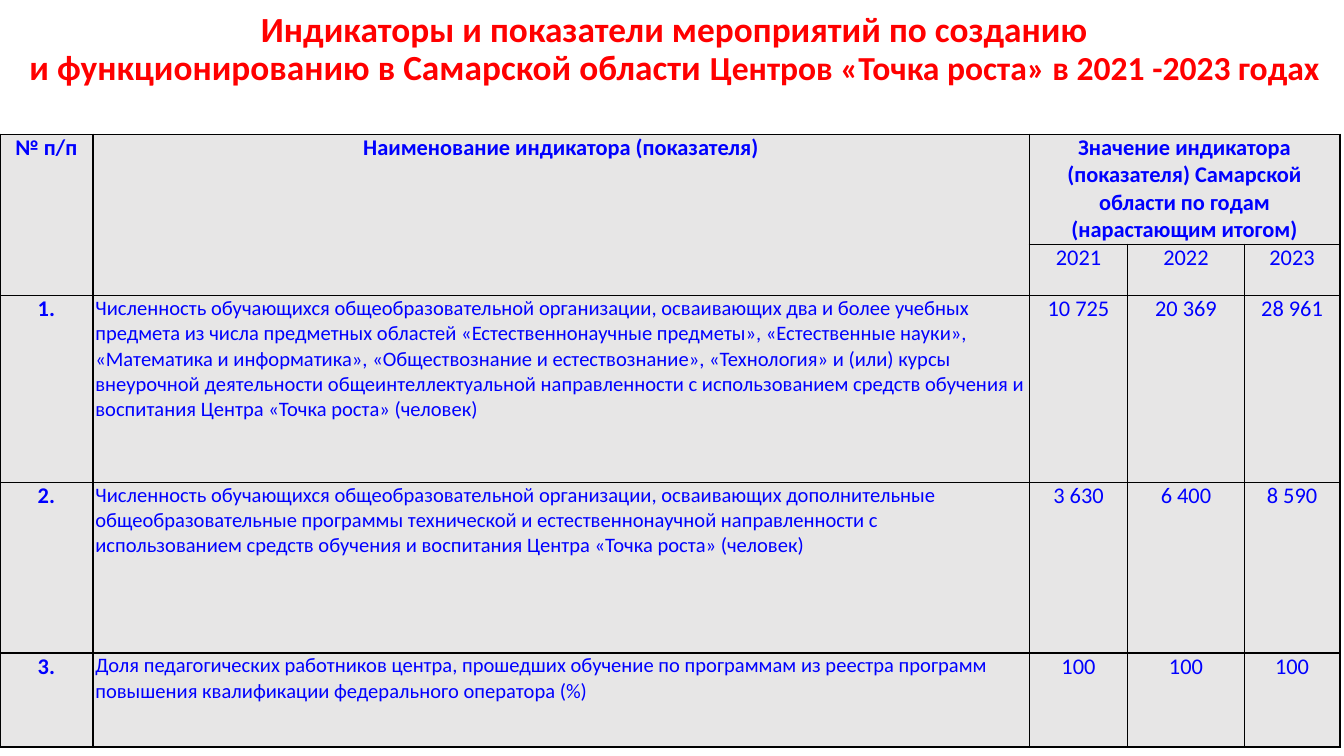
from lxml.etree import SubElement
from pptx import Presentation
from pptx.dml.color import RGBColor
from pptx.enum.text import MSO_ANCHOR, PP_ALIGN
from pptx.oxml.ns import qn
from pptx.util import Pt

TITLE = [
    ("Индикаторы и показатели мероприятий по созданию\v"
     "и функционированию в Самарской области ", 18.9),
    ("Центров «Точка роста» в 2021 -2023 годах", 18),
]
COLUMNS = [49.7, 501.8, 52.6, 62.6, 51.1]
HEIGHTS = [59, 27.4, 100.1, 91.4, 50.4]
MERGES = [(0, 0, 1, 0), (0, 1, 1, 1), (0, 2, 0, 4)]
ROWS = [
    ["№ п/п", "Наименование индикатора (показателя)",
     "Значение индикатора (показателя) Самарской области по годам "
     "(нарастающим итогом)", "", ""],
    ["", "", "2021", "2022", "2023"],
    ["1.",
     "Численность обучающихся общеобразовательной организации, осваивающих два "
     "и более учебных предмета из числа предметных областей «Естественнонаучные "
     "предметы», «Естественные науки», «Математика и информатика», "
     "«Обществознание и естествознание», «Технология» и (или) курсы внеурочной "
     "деятельности общеинтеллектуальной направленности с использованием средств "
     "обучения и воспитания Центра «Точка роста» (человек)",
     "10 725", "20 369", "28 961"],
    ["2.",
     "Численность обучающихся общеобразовательной организации, осваивающих "
     "дополнительные общеобразовательные программы технической и "
     "естественнонаучной направленности с использованием средств обучения и "
     "воспитания Центра «Точка роста» (человек)",
     "3 630", "6 400", "8 590"],
    ["3.",
     "Доля педагогических работников центра, прошедших обучение по программам "
     "из реестра программ повышения квалификации федерального оператора (%)",
     "100", "100", "100"],
]


def rgb(value):
    """Turn a hex string into a colour."""
    return RGBColor.from_string(value)


def apply(target, values):
    """Set every attribute listed in a dict of format values."""
    for name, value in values.items():
        setattr(target, name, value)


class Page:
    """Holds the style and the current slide."""

    font, red, blue, grey, black = "Calibri", "FF0000", "0000FF", "E7E6E6", "000000"

    def __init__(self, s):
        """Keep the slide to draw on."""
        self.s = s

    def run(self, p, text, size, color, bold):
        """Add one formatted run, where a vertical tab breaks the line."""
        for i, line in enumerate(text.split("\v")):
            if i:
                p.add_line_break()
            r = p.add_run()
            r.text = line
            apply(r.font, {"name": self.font, "size": Pt(size), "bold": bold})
            r.font.color.rgb = rgb(color)

    def title(self, runs, left, top, width, height):
        """Add the centred slide title."""
        sp = self.s.shapes.add_textbox(Pt(left), Pt(top), Pt(width), Pt(height))
        tf = sp.text_frame
        apply(tf, {"word_wrap": True, "vertical_anchor": MSO_ANCHOR.MIDDLE})
        p = tf.paragraphs[0]
        apply(p, {"alignment": PP_ALIGN.CENTER, "line_spacing": 0.9})
        for text, size in runs:
            self.run(p, text, size, self.red, True)

    def borders(self, cell):
        """Draw a thin line on all four sides of a cell."""
        tc_pr = cell._tc.get_or_add_tcPr()
        for side in ("lnL", "lnR", "lnT", "lnB"):
            ln = SubElement(tc_pr, qn(f"a:{side}"), w=str(Pt(1)))
            fill = SubElement(ln, qn("a:solidFill"))
            SubElement(fill, qn("a:srgbClr"), val=self.black)

    def cell(self, cell, text, size, bold, align):
        """Style one table cell and write its text."""
        apply(cell, {"margin_left": Pt(1.4), "margin_right": Pt(1.4),
                     "margin_top": 0, "margin_bottom": 0})
        self.borders(cell)
        cell.fill.solid()
        cell.fill.fore_color.rgb = rgb(self.grey)
        if text:
            p = cell.text_frame.paragraphs[0]
            p.alignment = align
            self.run(p, text, size, self.blue, bold)

    def table(self, rows, left, top):
        """Add the table of indicators."""
        table = self.s.shapes.add_table(
            len(rows), len(COLUMNS), Pt(left), Pt(top),
            Pt(sum(COLUMNS)), Pt(sum(HEIGHTS))).table
        apply(table, {"first_row": False, "horz_banding": False})
        for column, width in zip(table.columns, COLUMNS):
            column.width = Pt(width)
        for row, height in zip(table.rows, HEIGHTS):
            row.height = Pt(height)
        for top_row, first, bottom_row, last in MERGES:
            table.cell(top_row, first).merge(table.cell(bottom_row, last))
        for i, row in enumerate(rows):
            for j, text in enumerate(row):
                wording = i > 1 and j == 1
                self.cell(table.cell(i, j), text, 11 if wording else 12,
                          i == 0 or j == 0,
                          PP_ALIGN.LEFT if wording else PP_ALIGN.CENTER)


def main():
    """Build and save the slide."""
    prs = Presentation()
    apply(prs, {"slide_width": Pt(720), "slide_height": Pt(405)})
    page = Page(prs.slides.add_slide(prs.slide_layouts[6]))
    page.table(ROWS, 0, 72)
    page.title(TITLE, 2.9, 4.3, 717.1, 45.4)
    prs.save("out.pptx")


if __name__ == "__main__":
    main()
